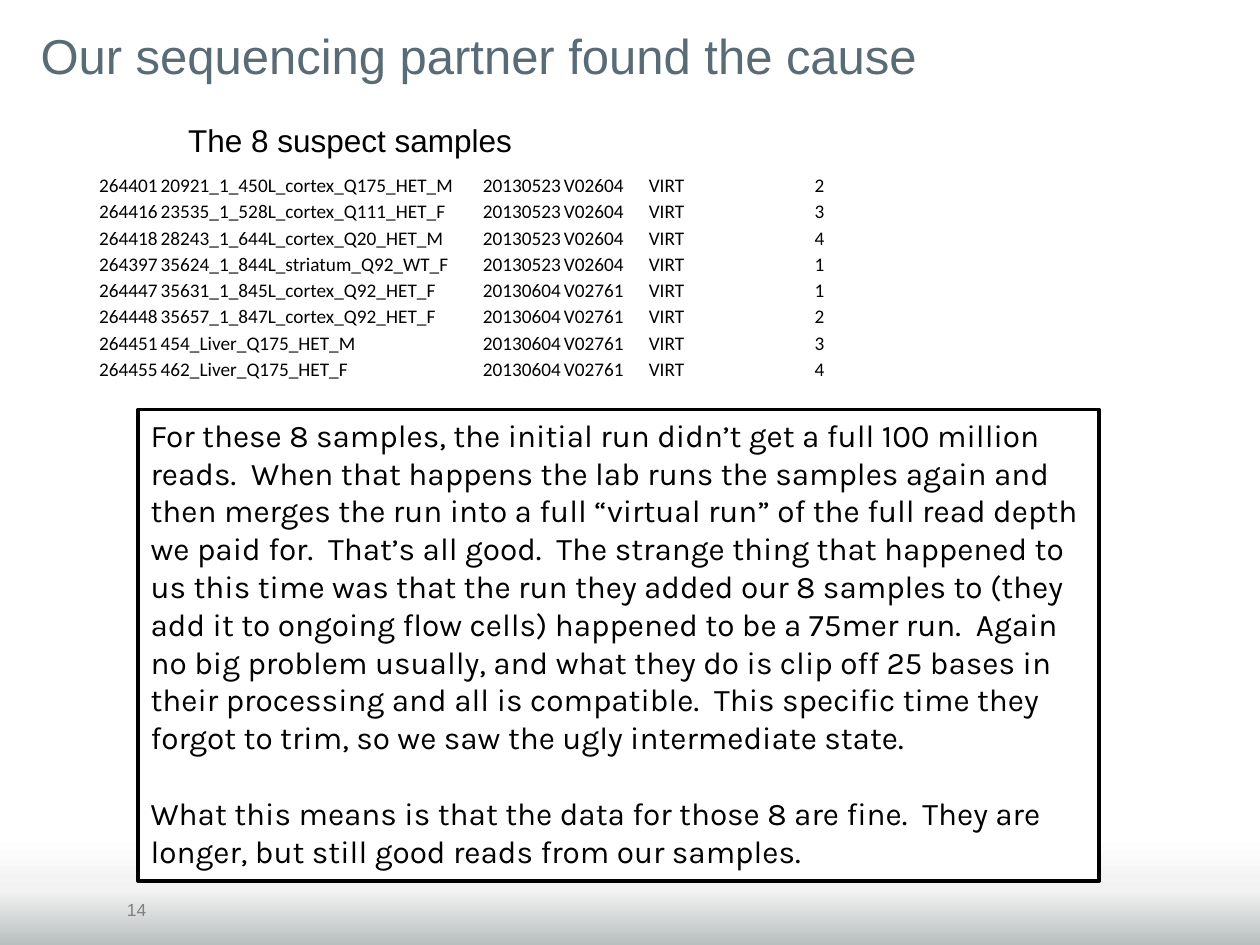
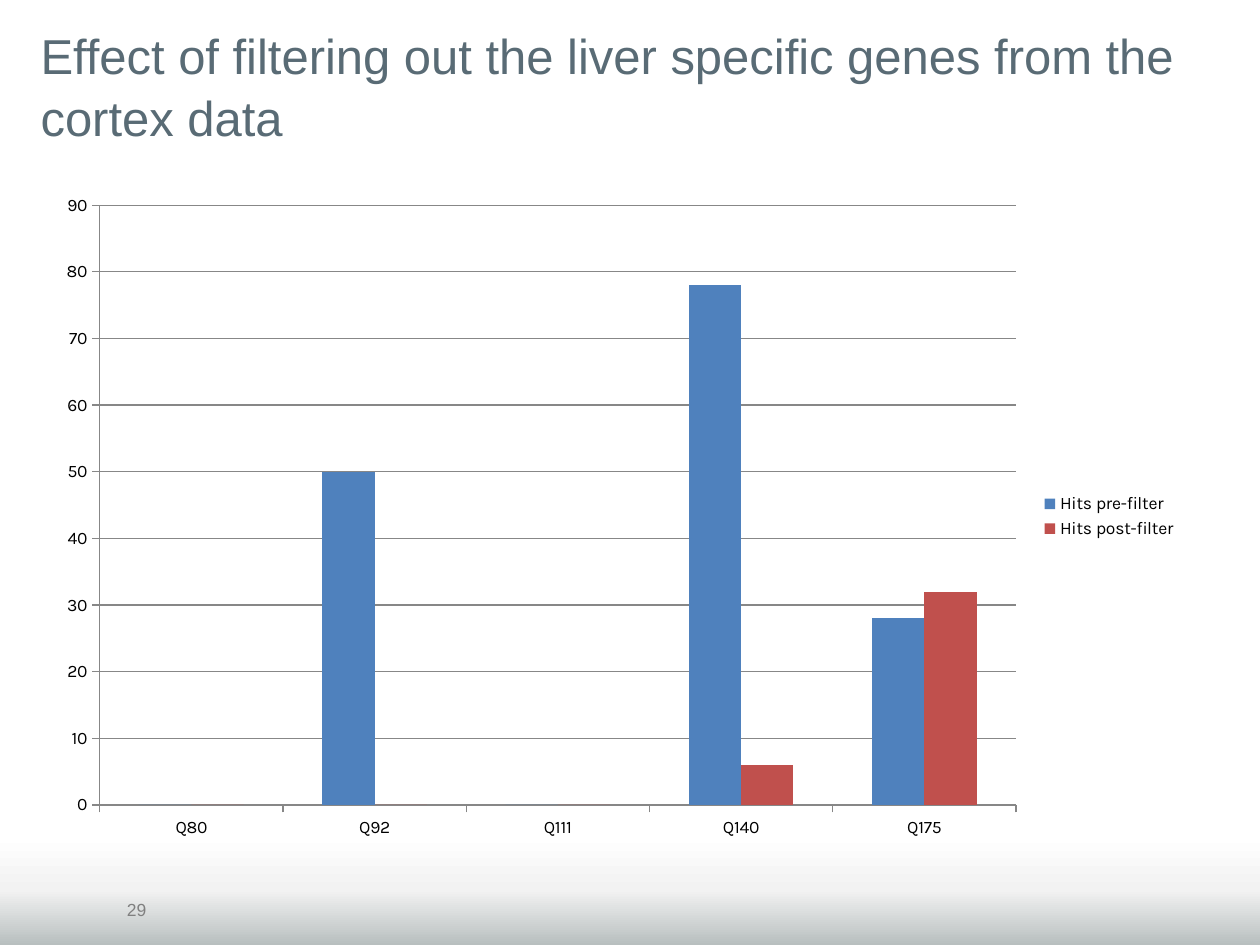
from copy import deepcopy
from lxml.etree import SubElement
from pptx import Presentation
from pptx.chart.data import CategoryChartData
from pptx.dml.color import RGBColor
from pptx.enum.chart import XL_CHART_TYPE, XL_LEGEND_POSITION, XL_TICK_MARK
from pptx.enum.shapes import MSO_SHAPE
from pptx.enum.text import MSO_ANCHOR, MSO_AUTO_SIZE, PP_ALIGN
from pptx.oxml.ns import qn
from pptx.util import Pt

COLORS = {
    "title": "596B75",
    "text": "000000",
    "number": "808080",
    "paper": "FFFFFF",
    "grid": "878787",
    "pre": "4F81BD",
    "post": "C0504D",
}
BAND = [(0, "B8BFBF"), (0.5, "F2F2F2"), (1, "FFFFFF")]

WIDTHS = [48, 182, 48.5, 48.5, 54, 48]
RIGHT = {0, 2, 5}
ROW = 15.03
SAMPLES = [
    ("264401", "20921_1_450L_cortex_Q175_HET_M", "20130523", "V02604", "VIRT", "2"),
    ("264416", "23535_1_528L_cortex_Q111_HET_F", "20130523", "V02604", "VIRT", "3"),
    ("264418", "28243_1_644L_cortex_Q20_HET_M", "20130523", "V02604", "VIRT", "4"),
    ("264397", "35624_1_844L_striatum_Q92_WT_F", "20130523", "V02604", "VIRT", "1"),
    ("264447", "35631_1_845L_cortex_Q92_HET_F", "20130604", "V02761", "VIRT", "1"),
    ("264448", "35657_1_847L_cortex_Q92_HET_F", "20130604", "V02761", "VIRT", "2"),
    ("264451", "454_Liver_Q175_HET_M", "20130604", "V02761", "VIRT", "3"),
    ("264455", "462_Liver_Q175_HET_F", "20130604", "V02761", "VIRT", "4"),
]
STORY = [
    "For these 8 samples, the initial run didn’t get a full 100 million reads.  "
    "When that happens the lab runs the samples again and then merges the run into "
    "a full “virtual run” of the full read depth we paid for.  That’s all good.  "
    "The strange thing that happened to us this time was that the run they added "
    "our 8 samples to (they add it to ongoing flow cells) happened to be a 75mer "
    "run.  Again no big problem usually, and what they do is clip off 25 bases in "
    "their processing and all is compatible.  This specific time they forgot to "
    "trim, so we saw the ugly intermediate state.",
    "What this means is that the data for those 8 are fine.  They are longer, but "
    "still good reads from our samples.",
]

GENES = ["Q80", "Q92", "Q111", "Q140", "Q175"]
HITS = [
    ("Hits pre-filter", (0, 50, 0, 78, 28), "pre"),
    ("Hits post-filter", (0, 0, 0, 6, 32), "post"),
]


def rgb(name):
    return RGBColor.from_string(COLORS[name])


def style(font, face, size, color):
    font.name = face
    font.size = Pt(size)
    font.color.rgb = rgb(color)


def write(par, text, face, size, color="text", align=PP_ALIGN.LEFT):
    par.text = text
    par.alignment = align
    style(par.font, face, size, color)


def add_band(slide):
    band = slide.shapes.add_shape(MSO_SHAPE.RECTANGLE, 0, Pt(477), Pt(720), Pt(63))
    band.shadow.inherit = False
    band.line.fill.background()
    band.fill.gradient()
    band.fill.gradient_angle = 90
    stops = band.element.spPr.find(qn("a:gradFill")).find(qn("a:gsLst"))
    stops.append(deepcopy(stops[0]))
    for stop, (spot, color) in zip(band.fill.gradient_stops, BAND):
        stop.color.rgb = RGBColor.from_string(color)
        stop.position = spot


def add_label(slide, text, left, top, width, height, size, color="text",
              anchor=MSO_ANCHOR.TOP, wrap=True):
    box = slide.shapes.add_textbox(Pt(left), Pt(top), Pt(width), Pt(height))
    frame = box.text_frame
    frame.word_wrap = wrap
    frame.vertical_anchor = anchor
    write(frame.paragraphs[0], text, "Arial", size, color)


def add_slide(deck, title, number):
    slide = deck.slides.add_slide(deck.slide_layouts[5])
    add_band(slide)
    head = slide.shapes.title
    head.left, head.top, head.width, head.height = Pt(16), Pt(7), Pt(672), Pt(76)
    frame = head.text_frame
    frame.auto_size = MSO_AUTO_SIZE.NONE
    frame.vertical_anchor = MSO_ANCHOR.TOP
    frame.margin_top = Pt(6)
    write(frame.paragraphs[0], title, "Arial", 28, "title")
    frame.paragraphs[0].line_spacing = 1.05
    add_label(slide, number, 65.5, 505, 42, 24, 10, "number", MSO_ANCHOR.BOTTOM)
    return slide


def add_samples(slide):
    table = slide.shapes.add_table(
        len(SAMPLES), len(WIDTHS), Pt(43), Pt(98), Pt(sum(WIDTHS)), Pt(ROW * len(SAMPLES))
    ).table
    table.first_row = table.horz_banding = False
    for col, width in zip(table.columns, WIDTHS):
        col.width = Pt(width)
    for row, sample in zip(table.rows, SAMPLES):
        row.height = Pt(ROW)
        for col, (cell, text) in enumerate(zip(row.cells, sample)):
            cell.fill.background()
            cell.vertical_anchor = MSO_ANCHOR.BOTTOM
            cell.margin_left = cell.margin_right = cell.margin_top = Pt(0.8)
            cell.margin_bottom = 0
            align = PP_ALIGN.RIGHT if col in RIGHT else PP_ALIGN.LEFT
            write(cell.text_frame.paragraphs[0], text, "Calibri", 11, align=align)


def add_story(slide):
    box = slide.shapes.add_shape(MSO_SHAPE.RECTANGLE, Pt(79), Pt(234), Pt(549), Pt(269.5))
    box.shadow.inherit = False
    box.fill.solid()
    box.fill.fore_color.rgb = rgb("paper")
    box.line.color.rgb = rgb("text")
    box.line.width = Pt(2)
    frame = box.text_frame
    frame.word_wrap = True
    frame.vertical_anchor = MSO_ANCHOR.TOP
    for index, text in enumerate(STORY):
        par = frame.add_paragraph() if index else frame.paragraphs[0]
        write(par, text, "Karla", 18)
        if index:
            par.space_before = Pt(21.6)


def add_hits(slide):
    data = CategoryChartData()
    data.categories = GENES
    for name, values, color in HITS:
        data.add_series(name, values)
    chart = slide.shapes.add_chart(
        XL_CHART_TYPE.COLUMN_CLUSTERED, Pt(25), Pt(104), Pt(655), Pt(382), data
    ).chart
    style(chart.font, "Karla", 10, "text")
    chart.has_title = False
    chart.has_legend = True
    chart.legend.position = XL_LEGEND_POSITION.RIGHT
    chart.legend.include_in_layout = False
    plot = chart.plots[0]
    plot.gap_width = 150
    plot.overlap = 0
    plot.vary_by_categories = False
    for series, (name, values, color) in zip(plot.series, HITS):
        series.format.fill.solid()
        series.format.fill.fore_color.rgb = rgb(color)
    scale = chart.value_axis
    scale.minimum_scale, scale.maximum_scale, scale.major_unit = 0, 90, 10
    scale.has_major_gridlines = True
    lines = [scale.major_gridlines.format.line]
    for axis in (scale, chart.category_axis):
        axis.major_tick_mark = XL_TICK_MARK.OUTSIDE
        axis.minor_tick_mark = XL_TICK_MARK.NONE
        lines.append(axis.format.line)
    for line in lines:
        line.color.rgb = rgb("grid")
        line.width = Pt(0.75)


def main():
    deck = Presentation()
    deck.slide_width, deck.slide_height = Pt(720), Pt(540)

    cause = add_slide(deck, "Our sequencing partner found the cause", "14")
    add_samples(cause)
    add_label(cause, "The 8 suspect samples", 100.5, 65.5, 202, 29, 18, wrap=False)
    add_story(cause)

    effect = add_slide(
        deck, "Effect of filtering out the liver specific genes from the cortex data", "29"
    )
    add_hits(effect)

    deck.save("out.pptx")


if __name__ == "__main__":
    main()
